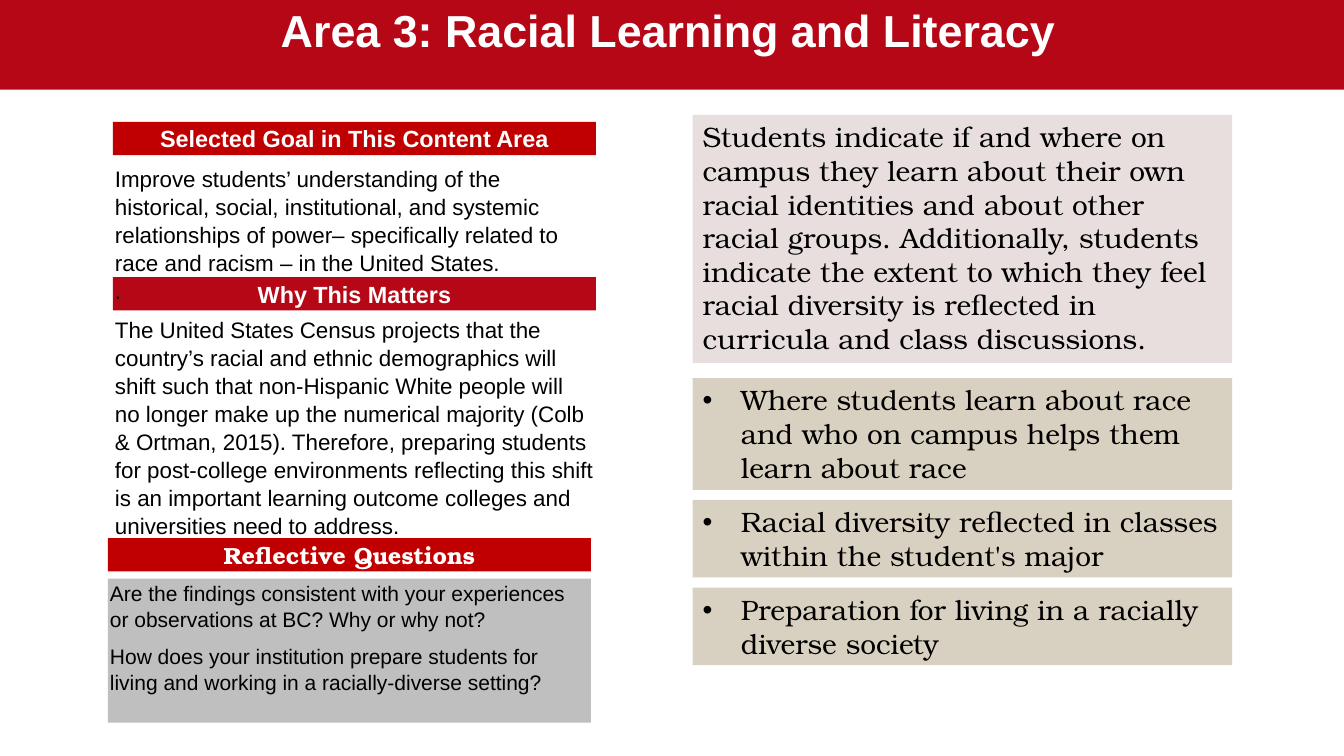
"""Build the slide on racial learning and literacy."""
from lxml import etree
from pptx import Presentation
from pptx.dml.color import RGBColor
from pptx.enum.shapes import MSO_SHAPE
from pptx.enum.text import MSO_ANCHOR, MSO_AUTO_SIZE, PP_ALIGN
from pptx.oxml.ns import qn
from pptx.util import Pt

RECT = MSO_SHAPE.RECTANGLE
TOP, MIDDLE = MSO_ANCHOR.TOP, MSO_ANCHOR.MIDDLE
LEFT, CENTER = PP_ALIGN.LEFT, PP_ALIGN.CENTER
FIXED = MSO_AUTO_SIZE.NONE
PX = 9144
SANS, SERIF = "Arial", "TeX Gyre Bonum"
RED, DEEP, GRAY, ROSE, SAND = "C00000", "B60717", "BFBFBF", "E8DEDE", "D8D0C0"
WHITE, BLACK = "FFFFFF", "000000"

TITLE = "Area 3: Racial Learning and Literacy"
HEADS = [
    ("Reflective Questions", 107, 534, RED, SERIF),
    ("Why This Matters", 112, 275, DEEP, SANS),
    ("Selected Goal in This Content Area", 112, 121, RED, SANS),
]
GOAL = [
    "Improve students’ understanding of the historical, social, institutional, "
    "and systemic relationships of power– specifically related to race and "
    "racism – in the United States.",
    ".",
]
REASON = [
    "The United States Census projects that the country’s racial and ethnic "
    "demographics will shift such that non-Hispanic White people will no longer "
    "make up the numerical majority (Colb & Ortman, 2015). Therefore, preparing "
    "students for post-college environments reflecting this shift is an important "
    "learning outcome colleges and universities need to address.",
]
ASKS = [
    "Are the findings consistent with your experiences or observations at BC? "
    "Why or why not?",
    "How does your institution prepare students for living and working in a "
    "racially-diverse setting?",
]
NOTES = [
    (GOAL, 112, 162, 135, None, 16, 0),
    (REASON, 112, 312, 218, None, 16, 0),
    (ASKS, 107, 574, 143, GRAY, 15, 3.8),
]
INTRO = (
    "Students indicate if and where on campus they learn about their own racial "
    "identities and about other racial groups. Additionally, students indicate "
    "the extent to which they feel racial diversity is reflected in curricula "
    "and class discussions."
)
POINTS = [
    ("Where students learn about race and who on campus helps them learn about race", 111),
    ("Racial diversity reflected in classes within the student's major", 77),
    ("Preparation for living in a racially diverse society", 77),
]
COL_W, HEAD_H = 479, 33
RIGHT_X, RIGHT_W = 687, 535
POINT_Y, GAP, HANG = 375, 10, 38


def color(code):
    """Turn a hex string into a colour."""
    return RGBColor.from_string(code)


def place(shape, x, y, w, h):
    """Set the position and size of a shape in px."""
    shape.left, shape.top = x * PX, y * PX
    shape.width, shape.height = w * PX, h * PX


def block(x, y, w, h, fill):
    """Add a rectangle without line or shadow."""
    shape = shapes.add_shape(RECT, 0, 0, 0, 0)
    place(shape, x, y, w, h)
    shape.shadow.inherit = False
    shape.line.fill.background()
    shape.fill.solid()
    shape.fill.fore_color.rgb = color(fill)
    return shape


def label(shape, lines, size, face, ink=BLACK, bold=False, align=LEFT,
          anchor=TOP, inset=(10, 5)):
    """Write and format the paragraphs of a shape."""
    frame = shape.text_frame
    frame.text = "\n".join(lines)
    frame.word_wrap = True
    frame.auto_size = FIXED
    frame.vertical_anchor = anchor
    frame.margin_left = frame.margin_right = inset[0] * PX
    frame.margin_top = frame.margin_bottom = inset[1] * PX
    for para in frame.paragraphs:
        para.alignment = align
        for run in para.runs:
            run.font.size, run.font.name = Pt(size), face
            run.font.bold = bold
            run.font.color.rgb = color(ink)
    return frame.paragraphs


def bullet(para):
    """Give a paragraph a hanging bullet."""
    props = para._p.get_or_add_pPr()
    props.set("marL", str(HANG * PX))
    props.set("indent", str(-HANG * PX))
    etree.SubElement(props, qn("a:buFont")).set("typeface", SANS)
    etree.SubElement(props, qn("a:buChar")).set("char", "•")


deck = Presentation()
deck.slide_width, deck.slide_height = 1333 * PX, 750 * PX
slide = deck.slides.add_slide(deck.slide_layouts[5])
shapes = slide.shapes

title = shapes.title
band = block(0, -2, 1333, 91, DEEP)
title._element.addprevious(band._element)
place(title, 236, 3, 854, 78)
label(title, [TITLE], 32, SANS, WHITE, True, CENTER, inset=(0, 0))

for text, x, y, fill, face in HEADS:
    head = block(x, y, COL_W, HEAD_H, fill)
    label(head, [text], 16.7, face, WHITE, True, CENTER, MIDDLE, (6, 1))

for lines, x, y, h, fill, size, space in NOTES:
    if fill:
        note = block(x, y, COL_W, h, fill)
    else:
        note = shapes.add_textbox(x * PX, y * PX, COL_W * PX, h * PX)
    for index, para in enumerate(label(note, lines, size, SANS, inset=(2, 1))):
        para.line_spacing = 1.04
        para.space_before = Pt(space if index else 0)
        para.space_after = Pt(space)

label(block(RIGHT_X, 114, RIGHT_W, 246, ROSE), [INTRO], 20, SERIF)

y = POINT_Y
for text, h in POINTS:
    point = block(RIGHT_X, y, RIGHT_W, h, SAND)
    bullet(label(point, [text], 20, SERIF)[0])
    y += h + GAP

deck.save("out.pptx")
